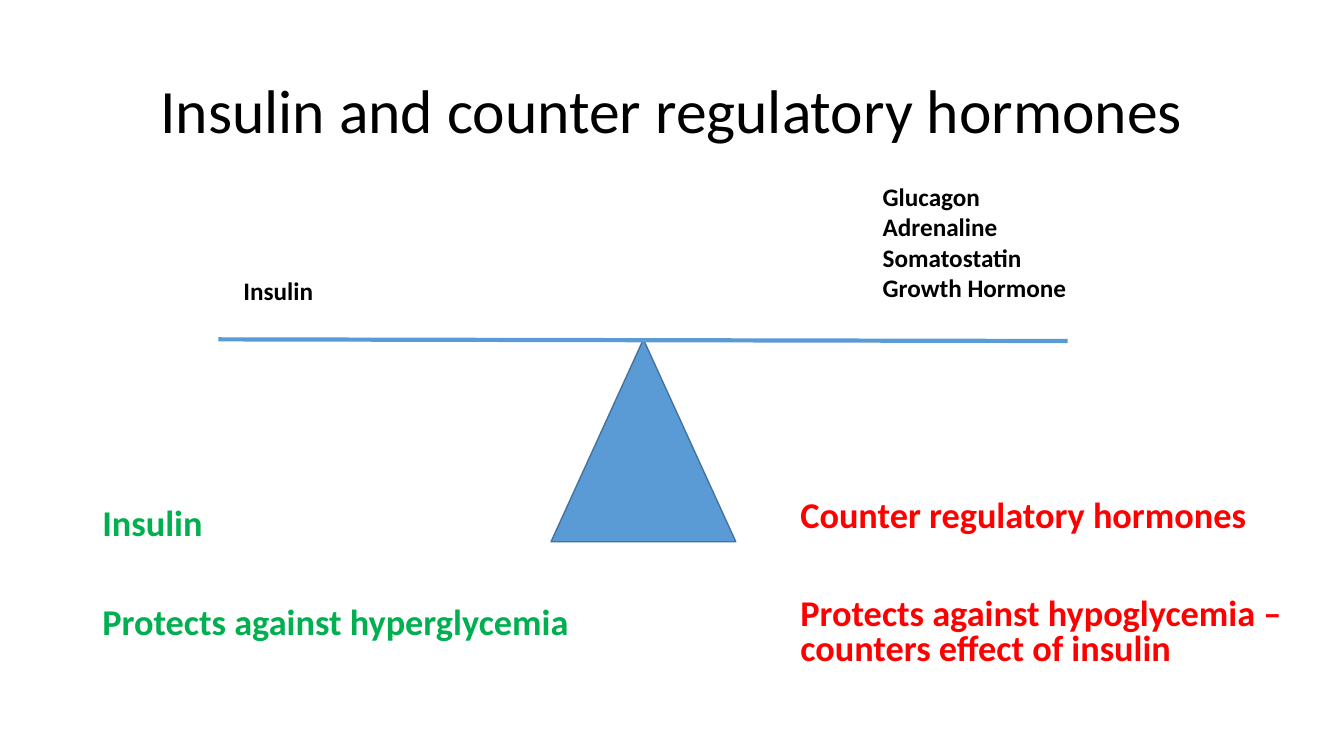
from dataclasses import dataclass

from lxml.etree import SubElement
from pptx import Presentation
from pptx.dml.color import RGBColor
from pptx.enum.shapes import MSO_CONNECTOR as Connector, MSO_SHAPE as Preset
from pptx.enum.text import MSO_ANCHOR as Anchor, MSO_AUTO_SIZE as AutoSize, PP_ALIGN as Align
from pptx.oxml.ns import qn
from pptx.slide import Slide
from pptx.util import Emu, Inches, Pt

COLUMNS, ROWS = 160, 90
CELL = Inches(1) // 12
FONT = "Calibri"
COLORS = {
    "black": "000000",
    "green": "00B050",
    "red": "FF0000",
    "blue": "5B9BD5",
    "edge": "43739E",
}


@dataclass(frozen=True)
class Area:
    column: float
    row: float
    columns: float
    rows: float


@dataclass(frozen=True)
class Caption:
    area: Area
    lines: tuple[str, ...]
    size: float
    color: str = "black"
    bold: bool = True
    align: Align = Align.LEFT
    anchor: Anchor = Anchor.TOP
    auto_size: AutoSize = AutoSize.NONE
    line_spacing: float = 1.0
    gap: float = 0
    top_rows: float = 0.6


def cells(count: float) -> Emu:
    return Emu(round(count * CELL))


def place(area: Area) -> tuple[Emu, ...]:
    return tuple(map(cells, (area.column, area.row, area.columns, area.rows)))


def color(name: str) -> RGBColor:
    return RGBColor.from_string(COLORS[name])


def draw_caption(slide: Slide, caption: Caption) -> None:
    frame = slide.shapes.add_textbox(*place(caption.area)).text_frame
    frame.text = "\n".join(caption.lines)
    frame.word_wrap = True
    frame.auto_size = caption.auto_size
    frame.vertical_anchor = caption.anchor
    frame.margin_top = cells(caption.top_rows)
    for index, paragraph in enumerate(frame.paragraphs):
        paragraph.alignment = caption.align
        paragraph.line_spacing = caption.line_spacing
        paragraph.space_before = Pt(caption.gap if index else 0)
        for run in paragraph.runs:
            run.font.name = FONT
            run.font.size = Pt(caption.size)
            run.font.bold = caption.bold
            run.font.color.rgb = color(caption.color)


def draw_pivot(slide: Slide, area: Area) -> None:
    pivot = slide.shapes.add_shape(Preset.ISOSCELES_TRIANGLE, *place(area))
    pivot.shadow.inherit = False
    pivot.fill.solid()
    pivot.fill.fore_color.rgb = color("blue")
    pivot.line.color.rgb = color("edge")
    pivot.line.width = Pt(1)


def draw_beam(slide: Slide, start: tuple[float, float], end: tuple[float, float]) -> None:
    beam = slide.shapes.add_connector(Connector.STRAIGHT, *map(cells, start + end))
    beam.line.color.rgb = color("blue")
    beam.line.width = Pt(3)
    SubElement(beam._element.spPr, qn("a:effectLst"))


def pan_label(area: Area, *hormones: str) -> Caption:
    return Caption(area, hormones, 18, auto_size=AutoSize.SHAPE_TO_FIT_TEXT)


def role(column: float, row: float, tint: str, *lines: str) -> Caption:
    return Caption(Area(column, row, 68, 57.1), lines, 25.9, tint,
                   line_spacing=0.8, gap=45.3, top_rows=36.6)


TITLE = Caption(Area(11, 4.8, 138, 17.4), ("Insulin and counter regulatory hormones",), 44,
                bold=False, align=Align.CENTER, anchor=Anchor.MIDDLE, line_spacing=0.9)
ROLES = (
    role(11, 24, "green", "Insulin", "Protects against hyperglycemia"),
    role(94.1, 23, "red", "Counter regulatory hormones",
         "Protects against hypoglycemia – counters effect of insulin"),
)
PAN_LABELS = (
    pan_label(Area(27.8, 32.2, 17.2, 4.8), "Insulin"),
    pan_label(Area(103.9, 21, 32.3, 19.4),
              "Glucagon", "Adrenaline", "Somatostatin", "Growth Hormone"),
)


def main() -> None:
    deck = Presentation()
    deck.slide_width, deck.slide_height = cells(COLUMNS), cells(ROWS)
    slide = deck.slides.add_slide(deck.slide_layouts[6])
    for caption in (TITLE, *ROLES):
        draw_caption(slide, caption)
    draw_pivot(slide, Area(65.6, 40.4, 22, 24.1))
    draw_beam(slide, (26, 40.4), (127.1, 40.6))
    for caption in PAN_LABELS:
        draw_caption(slide, caption)
    deck.save("out.pptx")


if __name__ == "__main__":
    main()
